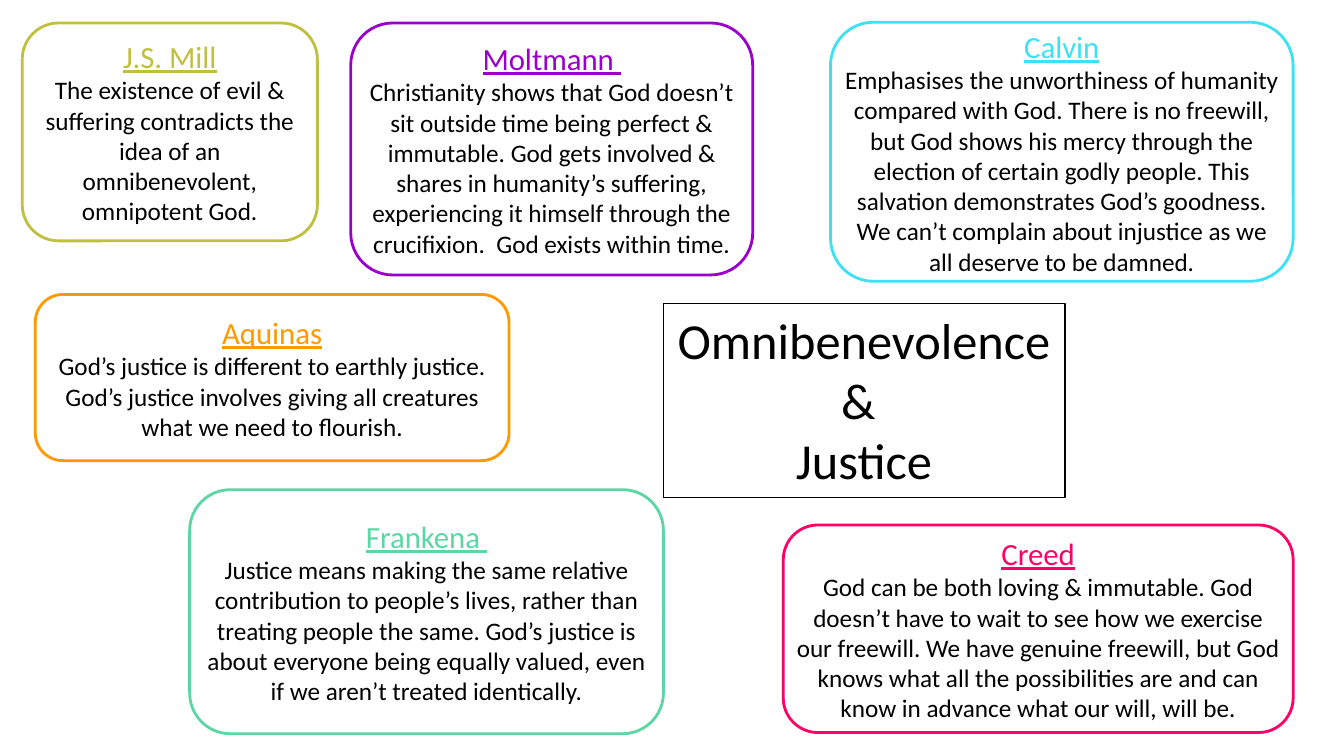
import pptx
import pptx.dml.color
import pptx.enum.shapes
import pptx.enum.text
import pptx.util
from pptx.util import Cm

FONT = "Calibri"
BLACK = "000000"
CENTER = pptx.enum.text.PP_ALIGN.CENTER

TITLE_LINES = ["Omnibenevolence", "& ", "Justice"]
TITLE_PLACE = (16.71, 7.65, 10.13, 4.88)

# Thinker, colour, place in cm (left, top, width, height), view
THINKERS = [
    ("Aquinas", "FF9900", (0.89, 7.42, 11.94, 4.19),
     "God’s justice is different to earthly justice. God’s justice involves "
     "giving all creatures what we need to flourish."),
    ("Moltmann ", "9900CC", (8.84, 0.58, 10.13, 6.35),
     "Christianity shows that God doesn’t sit outside time being perfect & "
     "immutable. God gets involved & shares in humanity’s suffering, "
     "experiencing it himself through the crucifixion.  God exists within time."),
    ("Creed", "FF0066", (19.74, 13.23, 12.85, 5.23),
     "God can be both loving & immutable. God doesn’t have to wait to see how "
     "we exercise our freewill. We have genuine freewill, but God knows what "
     "all the possibilities are and can know in advance what our will, will be."),
    ("Frankena ", "5BD7A5", (4.78, 12.34, 11.94, 6.15),
     "Justice means making the same relative contribution to people’s lives, "
     "rather than treating people the same. God’s justice is about everyone "
     "being equally valued, even if we aren’t treated identically."),
    ("Calvin", "3CE1F2", (20.93, 0.56, 11.66, 6.53),
     "Emphasises the unworthiness of humanity compared with God. There is no "
     "freewill, but God shows his mercy through the election of certain godly "
     "people. This salvation demonstrates God’s goodness. We can’t complain "
     "about injustice as we all deserve to be damned."),
    ("J.S. Mill", "C0C040", (0.56, 0.58, 7.44, 5.49),
     "The existence of evil & suffering contradicts the idea of an "
     "omnibenevolent, omnipotent God."),
]


def color(value):
    return pptx.dml.color.RGBColor.from_string(value)


def apply_format(target, values):
    for name, value in values.items():
        setattr(target, name, value)


def outline(box, line_color, width):
    box.line.color.rgb = color(line_color)
    box.line.width = pptx.util.Pt(width)


def write_lines(frame, lines):
    """Fill the frame with centred lines of (text, size, colour, underline)."""
    for index, (text, size, text_color, underline) in enumerate(lines):
        para = frame.add_paragraph() if index else frame.paragraphs[0]
        para.alignment = CENTER
        span = para.add_run()
        span.text = text
        apply_format(span.font, {"name": FONT, "size": pptx.util.Pt(size),
                                 "underline": underline})
        span.font.color.rgb = color(text_color)


def place_title(page):
    title = page.shapes.title
    left, top, width, height = map(Cm, TITLE_PLACE)
    apply_format(title, {"left": left, "top": top,
                         "width": width, "height": height})
    outline(title, BLACK, 0.75)
    apply_format(title.text_frame, {
        "word_wrap": True,
        "vertical_anchor": pptx.enum.text.MSO_ANCHOR.TOP,
        "auto_size": pptx.enum.text.MSO_AUTO_SIZE.SHAPE_TO_FIT_TEXT,
    })
    write_lines(title.text_frame,
                [(line, 36, BLACK, False) for line in TITLE_LINES])


def add_thinker(page, name, accent, place, view):
    box = page.shapes.add_shape(
        pptx.enum.shapes.MSO_SHAPE.ROUNDED_RECTANGLE, *map(Cm, place))
    box.shadow.inherit = False
    box.fill.background()
    outline(box, accent, 2)
    apply_format(box.text_frame, {
        "word_wrap": True,
        "vertical_anchor": pptx.enum.text.MSO_ANCHOR.MIDDLE,
        "margin_left": 0, "margin_top": 0,
        "margin_right": 0, "margin_bottom": 0,
    })
    write_lines(box.text_frame,
                [(name, 22, accent, True), (view, 18, BLACK, False)])


def main():
    deck = pptx.Presentation()
    apply_format(deck, {"slide_width": Cm(33.87), "slide_height": Cm(19.05)})
    page = deck.slides.add_slide(deck.slide_layouts.get_by_name("Title Only"))

    # Central topic
    place_title(page)

    # Thinkers around it
    for thinker in THINKERS:
        add_thinker(page, *thinker)

    deck.save("out.pptx")


if __name__ == "__main__":
    main()
